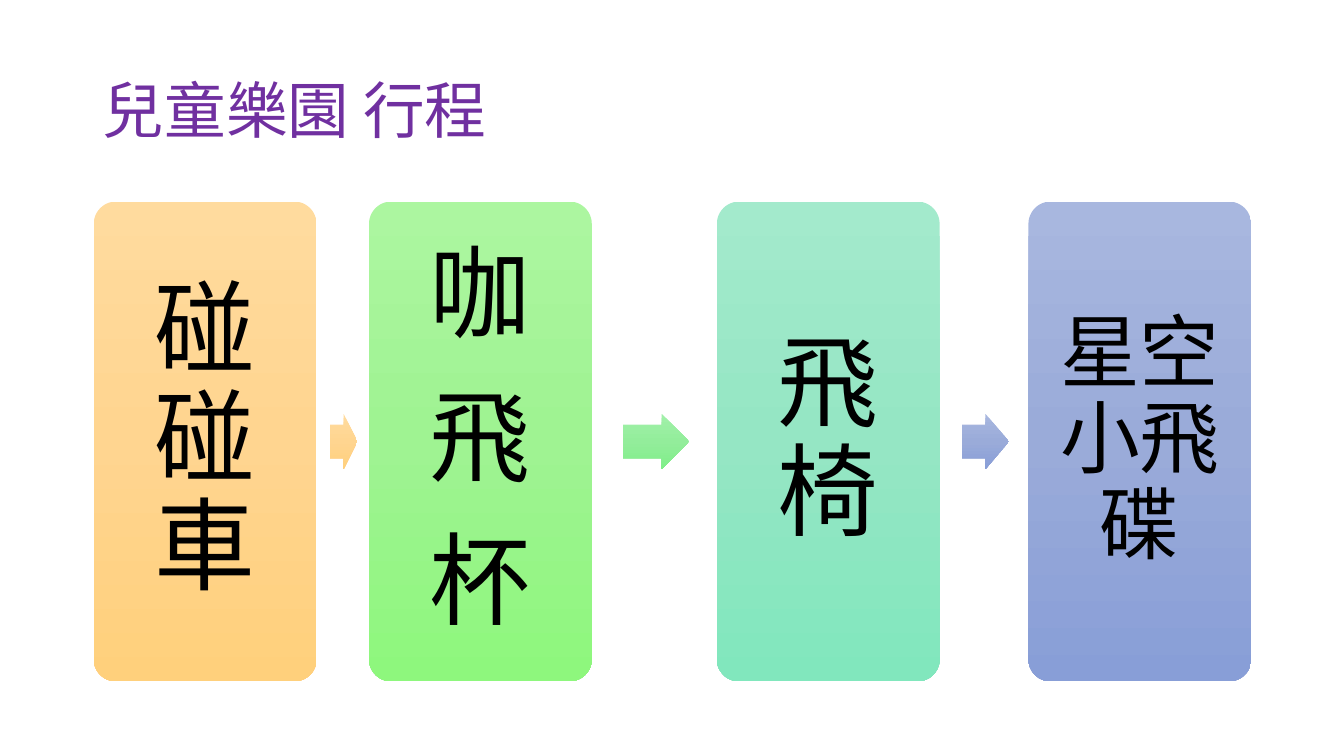
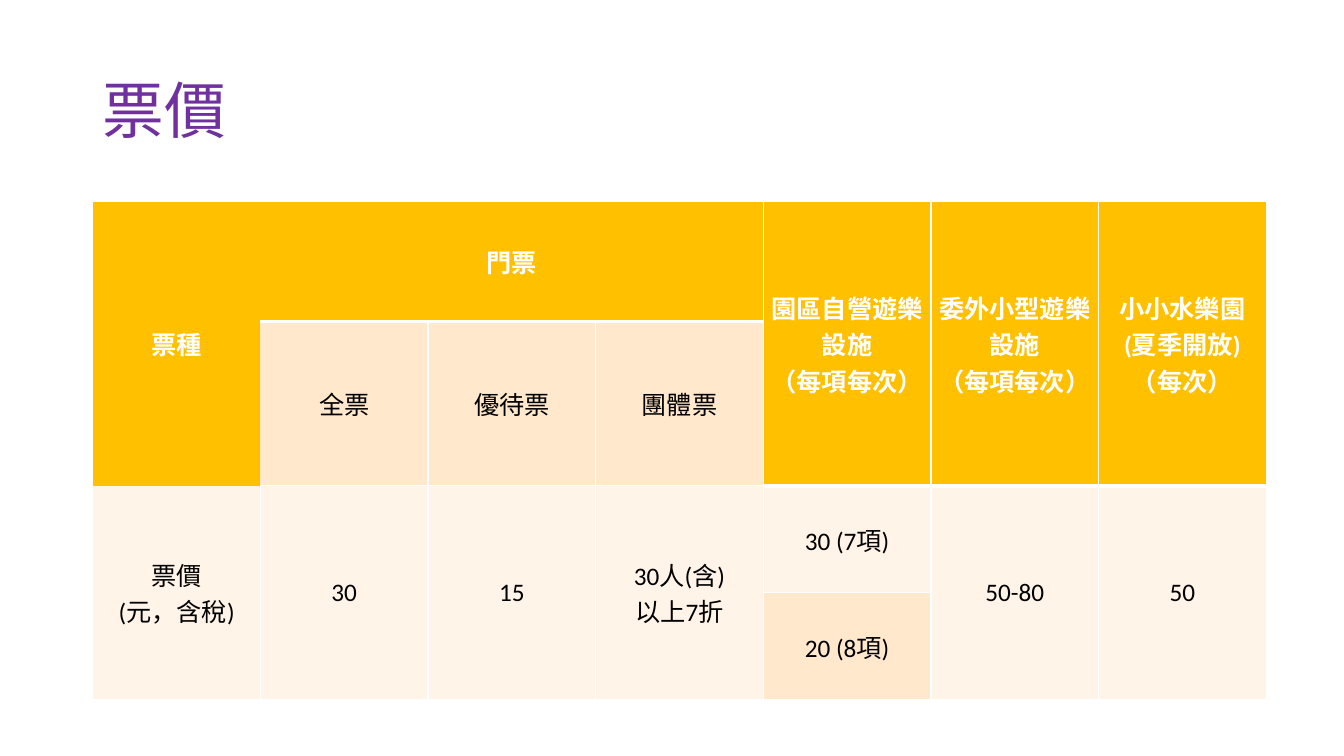
from pptx import Presentation
from pptx import util as u
from pptx.dml.color import RGBColor
from pptx.enum import shapes, text
from pptx.oxml import parse_xml
from pptx.oxml.ns import nsdecls

PX = 9144
COLORS = {
    "title": "7030A0", "ink": "000000", "white": "FFFFFF",
    "header": "FFC000", "band": "FFE8CC", "pale": "FFF4E7",
}
GRADIENTS = {
    "orange": ("FFDB9E", "FFD590", "FFD07C"),
    "lime": ("ACF6A0", "9FF392", "8EF77D"),
    "green": ("A1F0A9", "93ED9B", "7FEF89"),
    "mint": ("A3EACC", "95E6C4", "81E7BD"),
    "blue": ("A8B7DF", "9AABD9", "889ED7"),
}
BODY_FONT = "Calibri"
TITLE_FONT = "Noto Sans CJK JP"
TITLE_BOX = (92, 40, 1150, 145)

ROUTE_TITLE = "兒童樂園 行程"
CARD_TOP, CARD_WIDTH, CARD_HEIGHT = 200, 221, 476
ARROW_HEIGHT = 55
STOPS = [
    (93, ["碰碰車"], 72, 30, "orange"),
    (366, ["咖", "飛", "杯"], 72, 30, "lime"),
    (711, ["飛椅"], 72, 30, "mint"),
    (1020, ["星空小飛碟"], 57, 24, "blue"),
]
ARROW_GRADIENTS = ["orange", "green", "blue"]

PRICE_TITLE = "票價"
TABLE_LEFT, TABLE_TOP, TABLE_WIDTH = 92, 200, 1164
ROW_HEIGHTS = [119, 163, 106, 106]
COLUMN_COUNT = 7
PRICE_CELLS = [
    (0, 0, 2, 1, ["票種"], "header", ""),
    (0, 1, 1, 3, ["門票"], "header", "RTB"),
    (0, 4, 2, 1, ["園區自營遊樂設施", "（每項每次）"], "header", "LRTB"),
    (0, 5, 2, 1, ["委外小型遊樂設施", "（每項每次）"], "header", "LRTB"),
    (0, 6, 2, 1, ["小小水樂園", "(夏季開放)", "（每次）"], "header", "LRTB"),
    (1, 1, 1, 1, ["全票"], "band", "RTB"),
    (1, 2, 1, 1, ["優待票"], "band", "LRTB"),
    (1, 3, 1, 1, ["團體票"], "band", "LRTB"),
    (2, 0, 2, 1, ["票價", "(元，含稅)"], "pale", "LRB"),
    (2, 1, 2, 1, ["30"], "pale", "LRTB"),
    (2, 2, 2, 1, ["15"], "pale", "LRTB"),
    (2, 3, 2, 1, ["30人(含)", "以上7折"], "pale", "LRTB"),
    (2, 4, 1, 1, ["30 (7項)"], "pale", "LRTB"),
    (2, 5, 2, 1, ["50-80"], "pale", "LRTB"),
    (2, 6, 2, 1, ["50"], "pale", "LRTB"),
    (3, 4, 1, 1, ["20 (8項)"], "band", "LRTB"),
]


def px(*lengths):
    return [round(length * PX) for length in lengths]


def add_run(paragraph, words, size, color, font=BODY_FONT, bold=False):
    run = paragraph.add_run()
    run.text = words
    run.font.name = font
    run.font.size = u.Pt(size)
    run.font.bold = bold
    run.font.color.rgb = RGBColor.from_string(COLORS[color])


def set_margins(holder, margin):
    holder.margin_left = holder.margin_right = u.Emu(margin * PX)
    holder.margin_top = holder.margin_bottom = u.Emu(margin * PX)


def add_titled_slide(deck, words):
    slide = deck.slides.add_slide(deck.slide_layouts[5])
    title = slide.shapes.title
    title.left, title.top, title.width, title.height = px(*TITLE_BOX)
    frame = title.text_frame
    frame.word_wrap = True
    frame.auto_size = text.MSO_AUTO_SIZE.NONE
    frame.vertical_anchor = text.MSO_ANCHOR.MIDDLE
    heading = frame.paragraphs[0]
    heading.alignment = text.PP_ALIGN.LEFT
    heading.line_spacing = 0.9
    add_run(heading, words, 44, "title", TITLE_FONT)
    return slide


def add_gradient_shape(slide, kind, box, adjustments, gradient):
    shape = slide.shapes.add_shape(kind, *px(*box))
    for index, value in enumerate(adjustments):
        shape.adjustments[index] = value
    shape.shadow.inherit = False
    shape.line.fill.background()
    stops = "".join(
        f'<a:gs pos="{index * 50000}"><a:srgbClr val="{color}"/></a:gs>'
        for index, color in enumerate(GRADIENTS[gradient])
    )
    fill = parse_xml(
        f'<a:gradFill {nsdecls("a")} rotWithShape="1"><a:gsLst>{stops}</a:gsLst>'
        '<a:lin ang="5400000" scaled="0"/></a:gradFill>'
    )
    shape._element.spPr.find("{*}prstGeom").addnext(fill)
    return shape


def add_stop(slide, left, lines, size, margin, gradient):
    card = add_gradient_shape(
        slide, shapes.MSO_SHAPE.ROUNDED_RECTANGLE,
        (left, CARD_TOP, CARD_WIDTH, CARD_HEIGHT), [0.1], gradient,
    )
    frame = card.text_frame
    frame.word_wrap = True
    frame.vertical_anchor = text.MSO_ANCHOR.MIDDLE
    set_margins(frame, margin)
    for index, line in enumerate(lines):
        paragraph = frame.add_paragraph() if index else frame.paragraphs[0]
        paragraph.alignment = text.PP_ALIGN.CENTER
        paragraph.line_spacing = 0.9
        paragraph.space_after = u.Pt(round(size * 0.35))
        add_run(paragraph, line, size, "ink")


def build_route(deck):
    slide = add_titled_slide(deck, ROUTE_TITLE)
    for stop in STOPS:
        add_stop(slide, *stop)
    arrow_top = CARD_TOP + (CARD_HEIGHT - ARROW_HEIGHT) / 2
    for here, following, gradient in zip(STOPS, STOPS[1:], ARROW_GRADIENTS):
        card_right = here[0] + CARD_WIDTH
        gap = following[0] - card_right
        add_gradient_shape(
            slide, shapes.MSO_SHAPE.RIGHT_ARROW,
            (card_right + gap / 4, arrow_top, gap * 0.53, ARROW_HEIGHT),
            [0.6, 0.5], gradient,
        )


def set_borders(cell, sides, bottom_points):
    properties = cell._tc.get_or_add_tcPr()
    for side in "LRTB":
        points = bottom_points if side == "B" else 1
        paint = (
            f'<a:solidFill><a:srgbClr val="{COLORS["white"]}"/></a:solidFill>'
            if side in sides else "<a:noFill/>"
        )
        properties.append(parse_xml(
            f'<a:ln{side} {nsdecls("a")} w="{u.Pt(points)}">{paint}</a:ln{side}>'
        ))


def build_prices(deck):
    slide = add_titled_slide(deck, PRICE_TITLE)
    box = px(TABLE_LEFT, TABLE_TOP, TABLE_WIDTH, sum(ROW_HEIGHTS))
    prices = slide.shapes.add_table(len(ROW_HEIGHTS), COLUMN_COUNT, *box).table
    prices.first_row = prices.horz_banding = False
    for row, height in zip(prices.rows, ROW_HEIGHTS):
        row.height = u.Emu(height * PX)
    for column in prices.columns:
        column.width = u.Emu(TABLE_WIDTH * PX // COLUMN_COUNT)
    for row, column, row_span, column_span, lines, style, sides in PRICE_CELLS:
        cell = prices.cell(row, column)
        if row_span * column_span > 1:
            cell.merge(prices.cell(row + row_span - 1, column + column_span - 1))
        is_header = style == "header"
        set_borders(cell, sides, 3 if is_header else 1)
        cell.fill.solid()
        cell.fill.fore_color.rgb = RGBColor.from_string(COLORS[style])
        cell.vertical_anchor = text.MSO_ANCHOR.MIDDLE
        set_margins(cell, 3)
        paragraph = cell.text_frame.paragraphs[0]
        paragraph.alignment = text.PP_ALIGN.CENTER
        for index, line in enumerate(lines):
            if index:
                paragraph.add_line_break()
            add_run(paragraph, line, 18, "white" if is_header else "ink", bold=is_header)


def main():
    deck = Presentation()
    deck.slide_width, deck.slide_height = u.Inches(13.33), u.Inches(7.5)
    build_route(deck)
    build_prices(deck)
    deck.save("out.pptx")


if __name__ == "__main__":
    main()
